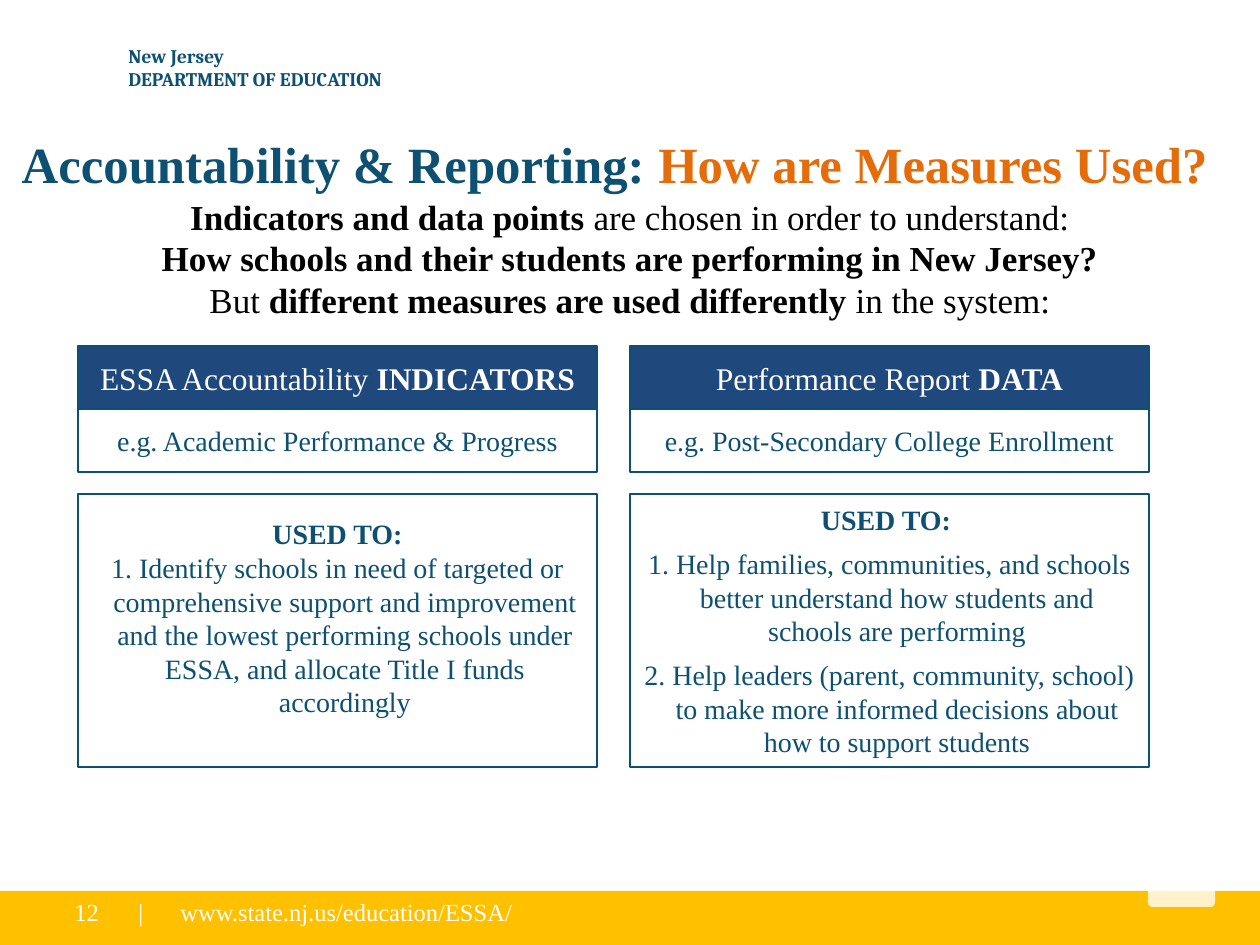
from lxml.etree import SubElement
from pptx import Presentation
from pptx.dml.color import RGBColor
from pptx.enum.shapes import MSO_SHAPE
from pptx.enum.text import MSO_ANCHOR, MSO_AUTO_SIZE, PP_ALIGN
from pptx.oxml.ns import qn
from pptx.util import Pt

TEAL = RGBColor(0x0D, 0x50, 0x72)
NAVY = RGBColor(0x1F, 0x49, 0x7D)
ORANGE = RGBColor(0xE4, 0x6C, 0x0A)
GOLD = RGBColor(0xFF, 0xC0, 0x00)
WHITE = RGBColor(0xFF, 0xFF, 0xFF)
BLACK = RGBColor(0, 0, 0)
SERIF = "Times New Roman"

# Content: each paragraph is a list of (text, bold) runs
DEPARTMENT = [[("New Jersey", True)], [("DEPARTMENT OF EDUCATION", True)]]
TITLE = [("Accountability & Reporting: ", TEAL), ("How are Measures Used?", ORANGE)]
INTRO = [
    [("Indicators and data points ", True), ("are chosen in order to understand:", False)],
    [("How schools and their students are performing in New Jersey?", True)],
    [("But ", False), ("different measures are used differently ", True),
     ("in the system:", False)],
]
COLUMNS = [
    {
        "heading": [("ESSA Accountability ", False), ("INDICATORS", True)],
        "example": "e.g. Academic Performance & Progress",
        "uses_title": "USED TO:",
        "uses": [" Identify schools in need of targeted or comprehensive support and "
                 "improvement and the lowest performing schools under ESSA, and "
                 "allocate Title I funds accordingly"],
        "anchor": MSO_ANCHOR.TOP, "title_spacing": 1.5, "space_after": 0,
    },
    {
        "heading": [("Performance Report ", False), ("DATA", True)],
        "example": "e.g. Post-Secondary College Enrollment",
        "uses_title": "USED TO: ",
        "uses": [" Help families, communities, and schools better understand how "
                 "students and schools are performing",
                 " Help leaders (parent, community, school) to make more informed "
                 "decisions about how to support students"],
        "anchor": MSO_ANCHOR.MIDDLE, "title_spacing": 1, "space_after": 6,
    },
]
PAGE_NUMBER = "12"
FOOTER = "|\twww.state.nj.us/education/ESSA/"

# Layout in px
COLUMN_LEFT, COLUMN_STEP, COLUMN_WIDTH = 78, 552, 519
HEADING_TOP, ROW_HEIGHT = 346, 63
USES_TOP, USES_HEIGHT = 494, 273
FOOTER_TOP, FOOTER_HEIGHT = 891, 43
HANGING_INDENT, FOOTER_TAB = 15, 42


def px(value):
    return round(value * 914400 / 126)


def place(shape, left, top, width, height):
    shape.left, shape.top, shape.width, shape.height = map(px, (left, top, width, height))


def write(shape, paragraphs, size, color, font=SERIF,
          align=PP_ALIGN.CENTER, anchor=MSO_ANCHOR.MIDDLE):
    frame = shape.text_frame
    frame.word_wrap = True
    frame.vertical_anchor = anchor
    for index, runs in enumerate(paragraphs):
        paragraph = frame.add_paragraph() if index else frame.paragraphs[0]
        paragraph.alignment = align
        paragraph.font.name = font
        paragraph.font.size = Pt(size)
        paragraph.font.color.rgb = color
        for text, bold in runs:
            run = paragraph.add_run()
            run.text = text
            run.font.name = font
            run.font.size = Pt(size)
            run.font.color.rgb = color
            run.font.bold = bold
    return frame.paragraphs


def add_text(slide, box, *args, **options):
    return write(slide.shapes.add_textbox(*map(px, box)), *args, **options)


def add_box(slide, box, fill, line_width=0, kind=MSO_SHAPE.RECTANGLE):
    shape = slide.shapes.add_shape(kind, *map(px, box))
    shape.shadow.inherit = False
    shape.fill.solid()
    shape.fill.fore_color.rgb = fill
    if line_width:
        shape.line.color.rgb = TEAL
        shape.line.width = Pt(line_width)
    else:
        shape.line.fill.background()
    return shape


def properties_before_font(paragraph, tag):
    properties = paragraph._p.get_or_add_pPr()
    element = SubElement(properties, qn(tag))
    default_font = properties.find(qn("a:defRPr"))
    if default_font is not None:
        default_font.addprevious(element)
    return properties, element


def number(paragraph):
    properties, bullet = properties_before_font(paragraph, "a:buAutoNum")
    bullet.set("type", "arabicPeriod")
    properties.set("marL", str(px(HANGING_INDENT)))
    properties.set("indent", str(-px(HANGING_INDENT)))


def add_frame(slide):
    # Department name and footer band
    add_box(slide, (0, FOOTER_TOP, 1260, 57), GOLD)
    add_text(slide, (116, 38, 315, 59), DEPARTMENT, 11, TEAL,
             font="Cambria", align=PP_ALIGN.LEFT)
    footer = add_text(slide, (126, FOOTER_TOP, 402, FOOTER_HEIGHT), [[(FOOTER, False)]],
                      14, WHITE, align=PP_ALIGN.LEFT, anchor=MSO_ANCHOR.TOP)
    _, tabs = properties_before_font(footer[0], "a:tabLst")
    SubElement(tabs, qn("a:tab"), pos=str(px(FOOTER_TAB)), algn="l")
    add_text(slide, (62, FOOTER_TOP, 54, FOOTER_HEIGHT), [[(PAGE_NUMBER, False)]],
             14, WHITE, align=PP_ALIGN.LEFT, anchor=MSO_ANCHOR.TOP)
    tab = add_box(slide, (1148, 880, 67, 27), WHITE, kind=MSO_SHAPE.ROUNDED_RECTANGLE)
    color = tab.fill._xPr.find(qn("a:solidFill"))[0]
    SubElement(color, qn("a:alpha"), val="79000")


def add_title(slide):
    title = slide.shapes.title
    place(title, 6, 126, 1218, 94)
    title.text_frame.auto_size = MSO_AUTO_SIZE.NONE
    paragraphs = write(title, [[(text, True) for text, _ in TITLE]], 29, TEAL,
                       anchor=MSO_ANCHOR.TOP)
    for run, (_, color) in zip(paragraphs[0].runs, TITLE):
        run.font.color.rgb = color


def add_column(slide, index, column):
    left = COLUMN_LEFT + index * COLUMN_STEP

    # Example and heading rows
    example = add_box(slide, (left, HEADING_TOP + ROW_HEIGHT, COLUMN_WIDTH, ROW_HEIGHT),
                      WHITE, 0.75)
    write(example, [[(column["example"], False)]], 16, TEAL)
    heading = add_box(slide, (left, HEADING_TOP, COLUMN_WIDTH, ROW_HEIGHT), NAVY, 1.5)
    write(heading, [column["heading"]], 18, WHITE)

    # Numbered uses
    uses = add_box(slide, (left, USES_TOP, COLUMN_WIDTH, USES_HEIGHT), WHITE, 0.75)
    lines = [[(column["uses_title"], True)]] + [[(text, False)] for text in column["uses"]]
    paragraphs = write(uses, lines, 16, TEAL, anchor=column["anchor"])
    paragraphs[0].line_spacing = column["title_spacing"]
    for paragraph in paragraphs:
        paragraph.space_after = Pt(column["space_after"])
    for paragraph in paragraphs[1:]:
        number(paragraph)


def main():
    presentation = Presentation()
    presentation.slide_width, presentation.slide_height = px(1260), px(945)
    slide = presentation.slides.add_slide(presentation.slide_layouts[5])
    add_frame(slide)
    intro = add_text(slide, (63, 197, 1134, 134), INTRO, 20, BLACK, anchor=MSO_ANCHOR.TOP)
    for index, paragraph in enumerate(intro):
        paragraph.line_spacing = 0.8
        paragraph.space_before = Pt(4.6 if index else 0)
    add_title(slide)
    for index, column in enumerate(COLUMNS):
        add_column(slide, index, column)
    presentation.save("out.pptx")


if __name__ == "__main__":
    main()
